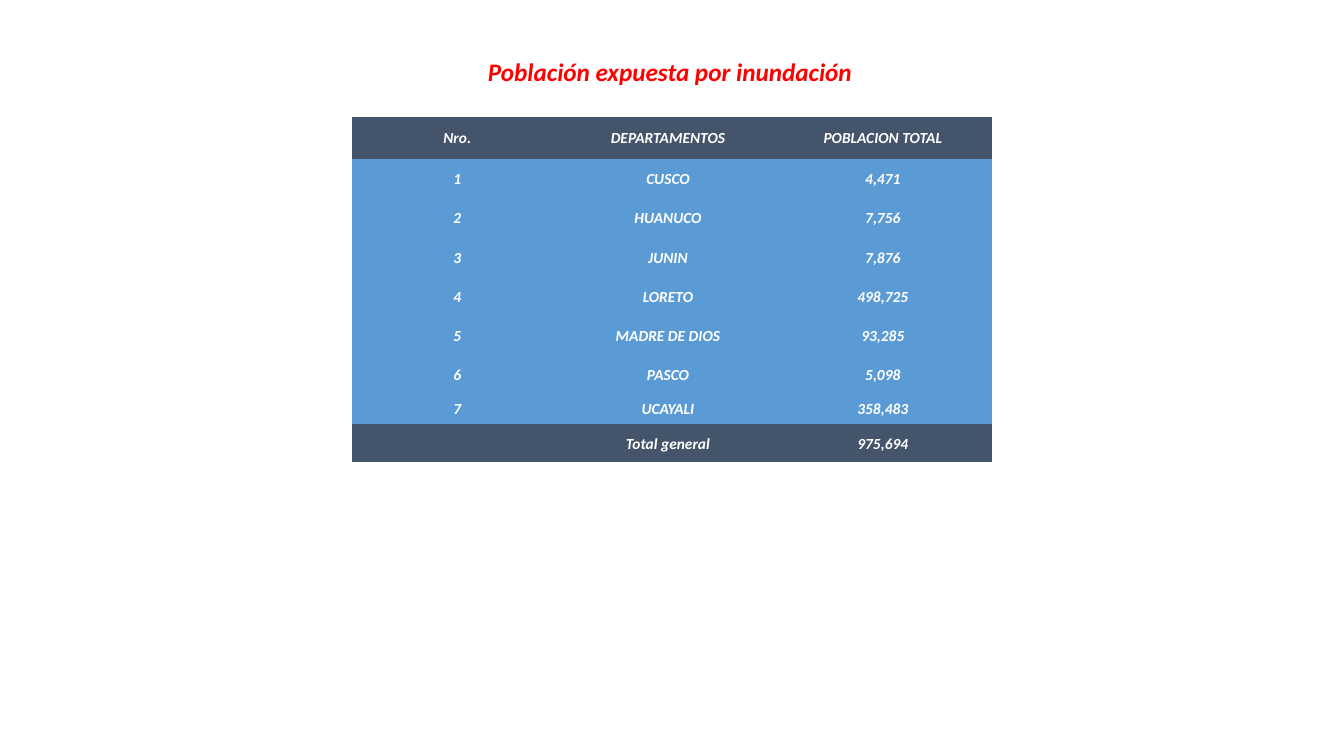
from pptx import Presentation
from pptx.dml.color import RGBColor
from pptx.enum.text import MSO_ANCHOR, MSO_AUTO_SIZE, PP_ALIGN
from pptx.util import Pt

NAVY, BLUE, RED, WHITE = "44546A", "5B9BD5", "FF0000", "FFFFFF"
FONT = {"name": "Calibri", "bold": True, "italic": True}
CELL = {"margin_left": Pt(0.7), "margin_top": Pt(0.7), "margin_right": Pt(0.7),
        "margin_bottom": 0, "vertical_anchor": MSO_ANCHOR.MIDDLE}
TITLE = {"margin_left": Pt(7.2), "margin_top": Pt(3.6), "margin_right": Pt(7.2),
         "margin_bottom": Pt(3.6), "vertical_anchor": MSO_ANCHOR.MIDDLE,
         "word_wrap": False, "auto_size": MSO_AUTO_SIZE.SHAPE_TO_FIT_TEXT}

COLUMNS = [150.5, 150.5, 156.5]
ROWS = [30] + [28.2] * 4 + [27, 28.2, 21.6, 27.2]
POPULATION = [("CUSCO", 4471), ("HUANUCO", 7756), ("JUNIN", 7876),
              ("LORETO", 498725), ("MADRE DE DIOS", 93285),
              ("PASCO", 5098), ("UCAYALI", 358483)]


def color(value):
    return RGBColor.from_string(value)


def apply(obj, values):
    for name, value in values.items():
        setattr(obj, name, value)


def write(p, text, size, ink):
    p.alignment = PP_ALIGN.CENTER
    if text:
        r = p.add_run()
        r.text = text
        apply(r.font, {**FONT, "size": Pt(size)})
        r.font.color.rgb = color(ink)


def add_title(s, text, left, top, width, height):
    sp = s.shapes.title
    apply(sp, {"left": Pt(left), "top": Pt(top), "width": Pt(width), "height": Pt(height)})
    tf = sp.text_frame
    apply(tf, TITLE)
    write(tf.paragraphs[0], text, 18, RED)


def add_population_table(s, left, top):
    total = sum(count for _, count in POPULATION)
    body = [(str(i), name, f"{count:,}") for i, (name, count) in enumerate(POPULATION, 1)]
    data = [("Nro.", "DEPARTAMENTOS", "POBLACION TOTAL"), *body,
            ("", "Total general", f"{total:,}")]
    tbl = s.shapes.add_table(len(data), len(COLUMNS), Pt(left), Pt(top),
                             Pt(sum(COLUMNS)), Pt(sum(ROWS))).table
    apply(tbl, {"first_row": False, "horz_banding": False})
    for col, width in zip(tbl.columns, COLUMNS):
        col.width = Pt(width)
    for i, (row, height, texts) in enumerate(zip(tbl.rows, ROWS, data)):
        row.height = Pt(height)
        fill = NAVY if i in (0, len(data) - 1) else BLUE
        for cell, text in zip(row.cells, texts):
            apply(cell, CELL)
            cell.fill.solid()
            cell.fill.fore_color.rgb = color(fill)
            write(cell.text_frame.paragraphs[0], text, 11, WHITE)
    tbl_style = tbl._tbl.tblPr.find("{*}tableStyleId")
    tbl_style.text = "{2D5ABB26-0587-4C30-8999-92F81FD0307C}"


def main():
    prs = Presentation()
    apply(prs, {"slide_width": Pt(960), "slide_height": Pt(540)})
    s = prs.slides.add_slide(prs.slide_layouts[5])
    add_title(s, "Población expuesta por inundación", 340, 36.7, 277.2, 28.8)
    add_population_table(s, 251.4, 83.6)
    prs.save("out.pptx")


if __name__ == "__main__":
    main()
